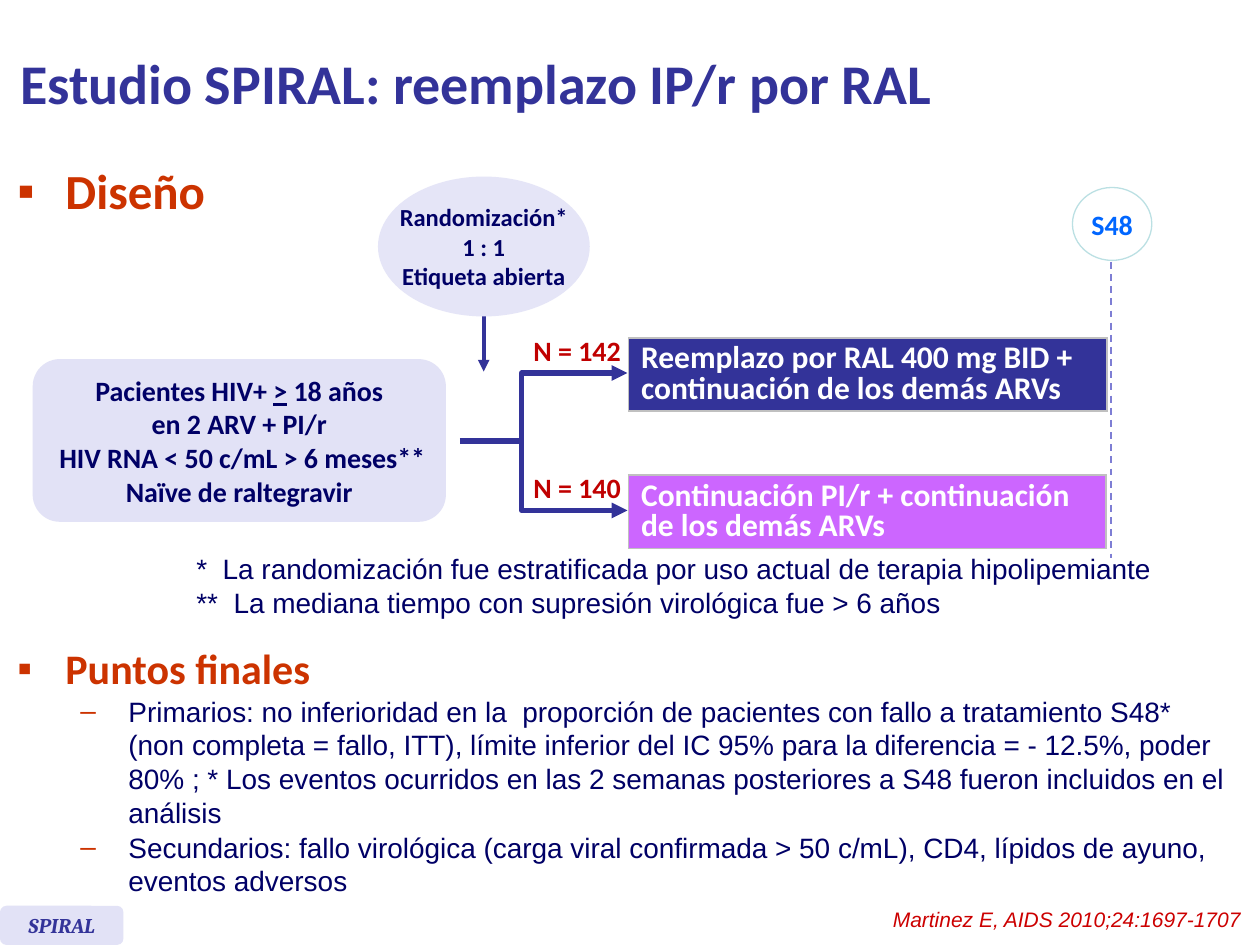
import copy
import pptx
import pptx.chart.data
import pptx.dml.color
import pptx.enum.dml
import pptx.enum.shapes
import pptx.enum.text
import pptx.oxml
import pptx.oxml.ns
import pptx.util
from lxml import etree

Cm = pptx.util.Cm
Pt = pptx.util.Pt
RGBColor = pptx.dml.color.RGBColor
qn = pptx.oxml.ns.qn
ALIGN = pptx.enum.text.PP_ALIGN
ANCHOR = pptx.enum.text.MSO_ANCHOR
SHAPE = pptx.enum.shapes.MSO_SHAPE

INDIGO = RGBColor(0x33, 0x33, 0x99)
NAVY = RGBColor(0x00, 0x00, 0x66)
RUST = RGBColor(0xCC, 0x33, 0x00)
RED = RGBColor(0xCC, 0x00, 0x00)
DARK_RED = RGBColor(0xC0, 0x00, 0x00)
BLUE = RGBColor(0x00, 0x66, 0xFF)
AQUA = RGBColor(0xBB, 0xE0, 0xE3)
VIOLET = RGBColor(0xCC, 0x66, 0xFF)
LILAC = RGBColor(0xE2, 0xE2, 0xF6)
PALE = RGBColor(0xE5, 0xE5, 0xF7)
DASH = RGBColor(0x7E, 0x7E, 0xD4)
GREY = RGBColor(0xC0, 0xC0, 0xC0)
WHITE = RGBColor(0xFF, 0xFF, 0xFF)

TITLE = "Estudio SPIRAL: reemplazo IP/r por RAL"
ENDPOINTS = [
    "Primarios: no inferioridad en la  proporción de pacientes con fallo a tratamiento S48* \v"
    "(non completa = fallo, ITT), límite inferior del IC 95% para la diferencia = - 12.5%, "
    "poder 80% ; * Los eventos ocurridos en las 2 semanas posteriores a S48 fueron incluidos "
    "en el análisis",
    "Secundarios: fallo virológica (carga viral confirmada > 50 c/mL), CD4, lípidos de ayuno, "
    "eventos adversos",
]
FOOTNOTES = [
    "*  La randomización fue estratificada por uso actual de terapia hipolipemiante",
    "**  La mediana tiempo con supresión virológica fue > 6 años",
]
RANDOMIZATION = ["Randomización*", "1 : 1", "Etiqueta abierta"]
PATIENTS = [
    "Pacientes HIV+ _>_ 18 años",
    "en 2 ARV + PI/r",
    " HIV RNA < 50 c/mL > 6 meses**",
    "Naïve de raltegravir",
]
ARMS = [
    ("N = 142", "Reemplazo por RAL 400 mg BID + continuación de los demás ARVs", INDIGO, 9.65),
    ("N = 140", "Continuación PI/r + continuación \vde los demás ARVs", VIOLET, 9.63),
]
ARM_TOP, ARM_STEP, ARM_HEIGHT = 6.81, 2.77, 1.47
ARM_TOPS = [ARM_TOP + ARM_STEP * row for row in range(len(ARMS))]
BRACKET_LEFT, BRACKET_RIGHT = 10.52, 12.65


def write(frame, lines, size=16, color=NAVY, font="Calibri", bold=True, italic=False,
          align=ALIGN.LEFT, bullet=None, indent=0, spacing=None, before=0, append=False):
    for number, line in enumerate(lines):
        first = number == 0 and not append
        para = frame.paragraphs[0] if first else frame.add_paragraph()
        para.alignment = align
        if spacing:
            para.line_spacing = spacing
        if before and not first:
            para.space_before = Pt(before)
        if bullet:
            props = para._p.get_or_add_pPr()
            props.set("marL", str(Cm(indent)))
            props.set("indent", str(-Cm(0.97)))
            tint = etree.SubElement(etree.SubElement(props, qn("a:buClr")), qn("a:srgbClr"))
            tint.set("val", str(RUST))
            etree.SubElement(props, qn("a:buFont")).set("typeface", "Arial")
            etree.SubElement(props, qn("a:buChar")).set("char", bullet)
        for part, piece in enumerate(line.split("_")):
            for order, text in enumerate(piece.split("\v")):
                if order:
                    para.add_line_break()
                span = para.add_run()
                span.text = text
                span.font.name, span.font.size = font, Pt(size)
                span.font.bold, span.font.italic = bold, italic
                span.font.color.rgb = color
                if part % 2:
                    span.font.underline = True
        for line_break in para._p.findall(qn("a:br")):
            line_break.append(copy.deepcopy(para.runs[0]._r.rPr))


def add_text(page, place, lines, wrap=True, **style):
    box = page.shapes.add_textbox(*map(Cm, place))
    box.text_frame.word_wrap = wrap
    write(box.text_frame, lines, **style)
    return box


def add_block(page, kind, place, fill, lines, outline=None, **style):
    block = page.shapes.add_shape(kind, *map(Cm, place))
    block.shadow.inherit = False
    block.fill.solid()
    block.fill.fore_color.rgb = fill
    if outline:
        block.line.color.rgb = outline
        block.line.width = Pt(0.75)
    else:
        block.line.fill.background()
    block.text_frame.word_wrap = False
    block.text_frame.vertical_anchor = ANCHOR.MIDDLE
    write(block.text_frame, lines, align=ALIGN.CENTER, **style)


def style_line(shape, color, width, *ends):
    shape.line.color.rgb = color
    shape.line.width = Pt(width)
    for end in ends:
        etree.SubElement(shape.line._get_or_add_ln(), qn("a:" + end)).set("type", "triangle")


def add_line(page, start, finish, color, width, *ends, dashed=False):
    line = page.shapes.add_connector(
        pptx.enum.shapes.MSO_CONNECTOR.STRAIGHT, *map(Cm, start + finish))
    style_line(line, color, width)
    if dashed:
        line.line.dash_style = pptx.enum.dml.MSO_LINE.DASH
    style_line(line, color, width, *ends)
    etree.SubElement(line._element.spPr, qn("a:effectLst"))


def add_arm(page, top, text, fill, width):
    table = page.shapes.add_table(
        1, 1, Cm(12.67), Cm(top), Cm(width), Cm(ARM_HEIGHT)).table
    table.first_row = table.horz_banding = False
    cell = table.cell(0, 0)
    props = cell._tc.get_or_add_tcPr()
    for side in ("lnL", "lnR", "lnT", "lnB"):
        border = etree.SubElement(props, qn("a:" + side), w=str(Pt(1)))
        paint = etree.SubElement(border, qn("a:solidFill"))
        etree.SubElement(paint, qn("a:srgbClr"), val=str(GREY))
    cell.fill.solid()
    cell.fill.fore_color.rgb = fill
    cell.vertical_anchor = ANCHOR.MIDDLE
    write(cell.text_frame, [text], size=18, color=WHITE, spacing=0.8)


def add_bracket(page, tops):
    upper, lower = tops
    builder = page.shapes.build_freeform(Cm(BRACKET_RIGHT), Cm(upper))
    corners = [(BRACKET_LEFT, upper), (BRACKET_LEFT, lower), (BRACKET_RIGHT, lower)]
    builder.add_line_segments([(Cm(x), Cm(y)) for x, y in corners], close=False)
    bracket = builder.convert_to_shape()
    bracket.shadow.inherit = False
    bracket.fill.background()
    style_line(bracket, INDIGO, 3, "headEnd", "tailEnd")


def main():
    deck = pptx.Presentation()
    deck.slide_width, deck.slide_height = Cm(25.4), Cm(19.05)
    page = deck.slides.add_slide(deck.slide_layouts[5])

    title = page.shapes.title
    title.left, title.top, title.width, title.height = map(Cm, (0.15, 0.13, 25.25, 3.07))
    title.text_frame.vertical_anchor = ANCHOR.MIDDLE
    write(title.text_frame, [TITLE], size=32, color=INDIGO)

    add_text(page, (0.1, 3.12, 5.03, 1.6), ["Diseño"], size=28, color=RUST,
             bullet="▪", indent=0.97)
    goals = add_text(page, (0.1, 12.83, 25.12, 5.89), ["Puntos finales"], size=24,
                     color=RUST, bullet="▪", indent=0.97)
    write(goals.text_frame, ENDPOINTS, font="Arial", bold=False, bullet="–",
          indent=2.24, before=0.8, append=True)

    for top, (_, text, fill, width) in zip(ARM_TOPS, ARMS):
        add_arm(page, top, text, fill, width)
    add_text(page, (3.71, 11, 19.81, 1.63), FOOTNOTES, wrap=False, font="Arial", bold=False)
    add_text(page, (16.38, 18.16, 8.89, 0.76), ["Martinez E, AIDS 2010;24:1697-1707"],
             size=12, color=RED, font="Arial", bold=False, italic=True, align=ALIGN.RIGHT)
    add_block(page, SHAPE.ROUNDED_RECTANGLE, (0, 18.26, 2.49, 0.79), LILAC, ["SPIRAL"],
              size=12, color=INDIGO, font="Cambria", italic=True)

    add_line(page, (9.75, 6.38), (9.75, 7.49), INDIGO, 2.25, "tailEnd")
    add_block(page, SHAPE.OVAL, (7.62, 3.56, 4.27, 2.82), PALE, RANDOMIZATION, size=14)
    add_block(page, SHAPE.ROUNDED_RECTANGLE, (0.66, 7.24, 8.33, 3.28), LILAC, PATIENTS)
    add_bracket(page, [top + 0.71 for top in ARM_TOPS])
    add_line(page, (9.27, 8.89), (10.46, 8.89), INDIGO, 3)
    for top, (count, *_) in zip(ARM_TOPS, ARMS):
        add_text(page, (10.49, top - 0.21, 2.29, 0.94), [count], wrap=False,
                 color=DARK_RED, align=ALIGN.CENTER)
    add_block(page, SHAPE.OVAL, (21.62, 3.78, 1.6, 1.47), WHITE, ["S48"],
              outline=AQUA, color=BLUE)
    add_line(page, (22.4, 5.28), (22.4, 11.25), DASH, 1, dashed=True)

    deck.save("out.pptx")


if __name__ == "__main__":
    main()
